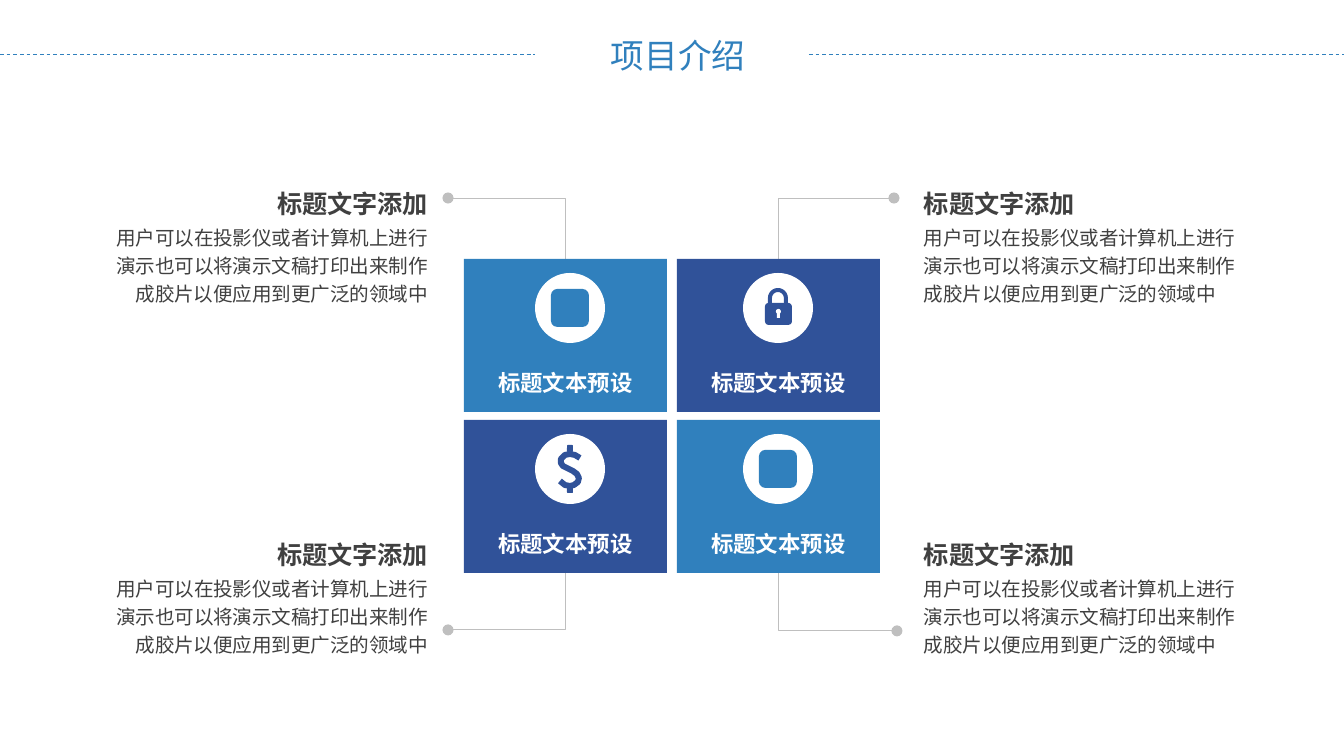
from math import cos, pi, sin

from lxml.etree import SubElement
from pptx import Presentation
from pptx.dml.color import RGBColor
from pptx.enum.dml import MSO_LINE
from pptx.enum.lang import MSO_LANGUAGE_ID as LANG
from pptx.enum.shapes import MSO_CONNECTOR as CONNECTOR, MSO_SHAPE as SHAPE
from pptx.enum.text import MSO_ANCHOR as ANCHOR, MSO_AUTO_SIZE as AUTO, PP_ALIGN as ALIGN
from pptx.oxml.ns import qn
from pptx.util import Emu, Pt

COLORS = {"blue": "3080BD", "navy": "305299", "white": "FFFFFF",
          "gray": "BFBFBF", "ink": "404040"}
HEADING = "标题文字添加"
DETAIL = "用户可以在投影仪或者计算机上进行演示也可以将演示文稿打印出来制作成胶片以便应用到更广泛的领域中"
CARD_LABEL = "标题文本预设"
CARD_W, CARD_H = 203, 153
CIRCLE = 70


def px(value):
    return Emu(round(value * 914400 / 134.4))


def rgb(name):
    return RGBColor.from_string(COLORS[name])


def write(shape, text, size, color, font="Calibri", bold=False, align=ALIGN.LEFT,
          anchor=ANCHOR.TOP, insets=(13, 7, 13, 7), wrap=True, grow=True, spacing=None):
    """Put one formatted paragraph into a shape; insets are left, top, right, bottom."""
    frame = shape.text_frame
    frame.word_wrap = wrap
    frame.auto_size = AUTO.SHAPE_TO_FIT_TEXT if grow else AUTO.NONE
    frame.vertical_anchor = anchor
    (frame.margin_left, frame.margin_top,
     frame.margin_right, frame.margin_bottom) = map(px, insets)
    paragraph = frame.paragraphs[0]
    paragraph.alignment = align
    paragraph.line_spacing = spacing
    run = paragraph.add_run()
    run.text = text
    run.font.size = Pt(size)
    run.font.bold = bold
    run.font.name = font
    run.font.language_id = LANG.SIMPLIFIED_CHINESE
    run.font.color.rgb = rgb(color)
    SubElement(run.font._element, qn("a:ea"), typeface=font)


def add_block(slide, kind, x, y, w, h, color):
    block = slide.shapes.add_shape(kind, px(x), px(y), px(w), px(h))
    block.shadow.inherit = False
    block.fill.solid()
    block.fill.fore_color.rgb = rgb(color)
    block.line.fill.background()
    return block


def add_line(slide, kind, start, end, color):
    line = slide.shapes.add_connector(kind, *map(px, start + end))
    line.line.color.rgb = rgb(color)
    line.line.width = Pt(0.5)
    SubElement(line._element.spPr, qn("a:effectLst"))
    return line


def add_stroke(slide, x, y, points, width, color):
    """Draw an open thick line through points given relative to x, y."""
    (start_x, start_y), *rest = [(px(x + dx), px(y + dy)) for dx, dy in points]
    builder = slide.shapes.build_freeform(start_x, start_y)
    builder.add_line_segments(rest, close=False)
    stroke = builder.convert_to_shape()
    stroke.shadow.inherit = False
    stroke.fill.background()
    stroke.line.color.rgb = rgb(color)
    stroke.line.width = px(width)


def draw_badge(slide, x, y, color):
    add_block(slide, SHAPE.ROUNDED_RECTANGLE, x + 16, y + 16, 38, 38, color)


def draw_lock(slide, x, y, color):
    arch = [(35 - 8 * cos(pi * i / 12), 25 - 8 * sin(pi * i / 12)) for i in range(13)]
    add_stroke(slide, x, y, [(27, 32), *arch, (43, 32)], 4, color)
    add_block(slide, SHAPE.ROUNDED_RECTANGLE, x + 22, y + 30, 27, 22, color)
    add_block(slide, SHAPE.OVAL, x + 33, y + 36, 5, 5, "white")
    add_block(slide, SHAPE.RECTANGLE, x + 34, y + 40, 3, 5, "white")


def draw_dollar(slide, x, y, color):
    curve = [(45, 24), (40, 21), (35, 20), (30, 21), (26, 25), (26, 29), (28, 32),
             (32, 34), (38, 37), (42, 40), (44, 44), (43, 48), (39, 51), (35, 52),
             (30, 51), (25, 47)]
    add_stroke(slide, x, y, curve, 6, color)
    for top in (11, 52):
        add_block(slide, SHAPE.ROUNDED_RECTANGLE, x + 32, y + top, 6, 7, color)


def add_header(slide, text):
    title = slide.shapes.title
    title.left, title.top, title.width, title.height = map(px, (602, 30, 156, 51))
    write(title, text, 18, "blue", font="Noto Sans CJK SC", insets=(9, 5, 9, 5), wrap=False)
    for start, end in ((0, 535), (809, 1344)):
        rule = add_line(slide, CONNECTOR.STRAIGHT, (start, 55), (end, 55), "blue")
        rule.line.dash_style = MSO_LINE.DASH


def add_card(slide, x, y, color, circle_dx, draw_icon):
    card = add_block(slide, SHAPE.RECTANGLE, x, y, CARD_W, CARD_H, color)
    write(card, CARD_LABEL, 12, "white", bold=True, align=ALIGN.CENTER,
          anchor=ANCHOR.BOTTOM, insets=(13, 7, 13, 16), wrap=False, grow=False)
    add_block(slide, SHAPE.OVAL, x + circle_dx, y + 14, CIRCLE, CIRCLE, "white")
    draw_icon(slide, x + circle_dx, y + 14, color)


def add_callout_line(slide, dot, card_edge):
    """Run sideways from a round dot, then turn once to the card edge."""
    callout = add_line(slide, CONNECTOR.ELBOW, dot, card_edge, "gray")
    callout._element.spPr.find(qn("a:prstGeom")).set("prst", "bentConnector2")
    SubElement(callout.line._get_or_add_ln(), qn("a:headEnd"), type="oval")


def add_note(slide, x, y, w, align):
    heading_w = 247
    heading_x = x + w - heading_w if align == ALIGN.RIGHT else x
    for text, size, bold, box in (
            (DETAIL, 10.5, False, (x, y + 39, w, 100)),
            (HEADING, 13.5, True, (heading_x, y, heading_w, 50))):
        note = slide.shapes.add_textbox(*map(px, box))
        write(note, text, size, "ink", bold=bold, align=align, spacing=1.2)


def main():
    deck = Presentation()
    deck.slide_width, deck.slide_height = px(1344), px(756)
    slide = deck.slides.add_slide(deck.slide_layouts[5])
    add_header(slide, "项目介绍")

    quadrants = (  # column, row, card colour, icon, callout dot
        (0, 0, "blue", draw_badge, (448, 198)),
        (1, 0, "navy", draw_lock, (894, 198)),
        (0, 1, "navy", draw_dollar, (448, 630)),
        (1, 1, "blue", draw_badge, (897, 631)),
    )
    for column, row, color, draw_icon, dot in quadrants:
        card_x, card_y = 464 + column * 213, 259 + row * 161
        add_callout_line(slide, dot, (card_x + CARD_W / 2, card_y + row * CARD_H))
        add_card(slide, card_x, card_y, color, (71, 66)[column], draw_icon)
        add_note(slide, (85, 911)[column], 175 + row * 351, 356,
                 (ALIGN.RIGHT, ALIGN.LEFT)[column])
    deck.save("out.pptx")


if __name__ == "__main__":
    main()
